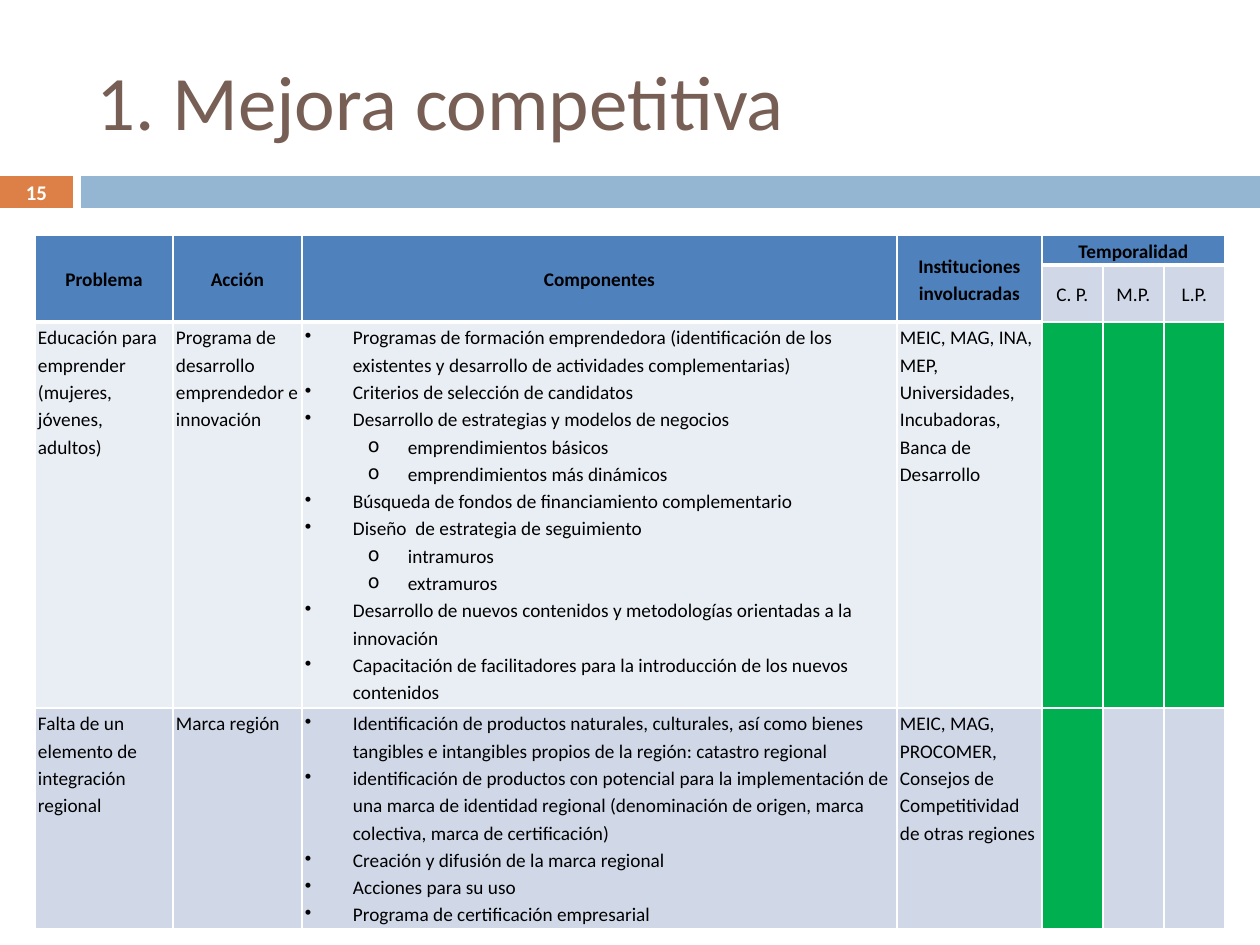
import pptx
import pptx.util
import pptx.dml.color
import pptx.enum.shapes
import pptx.enum.text
import pptx.oxml
import pptx.oxml.ns

EMU_PER_PX = 914400 / 126
ORANGE = pptx.dml.color.RGBColor(0xDD, 0x80, 0x47)
LIGHT_BLUE = pptx.dml.color.RGBColor(0x94, 0xB6, 0xD2)
BROWN = pptx.dml.color.RGBColor(0x77, 0x5F, 0x55)
HEADER_BLUE = pptx.dml.color.RGBColor(0x4F, 0x81, 0xBD)
PALE = pptx.dml.color.RGBColor(0xE9, 0xED, 0xF4)
PALE_BLUE = pptx.dml.color.RGBColor(0xD0, 0xD8, 0xE8)
GREEN = pptx.dml.color.RGBColor(0x00, 0xB0, 0x50)
WHITE = pptx.dml.color.RGBColor(0xFF, 0xFF, 0xFF)
BLACK = pptx.dml.color.RGBColor(0x00, 0x00, 0x00)
CENTER = pptx.enum.text.PP_ALIGN.CENTER
LEFT = pptx.enum.text.PP_ALIGN.LEFT
MIDDLE = pptx.enum.text.MSO_ANCHOR.MIDDLE
TOP = pptx.enum.text.MSO_ANCHOR.TOP

COLUMN_WIDTHS = [138, 129, 595, 145, 61, 61, 61]
ROW_HEIGHTS = [30, 57, 386, 221]
HEADERS = ["Problema", "Acción", "Componentes", "Instituciones involucradas", "Temporalidad"]
TERMS = ["C. P.", "M.P.", "L.P."]
BULLETS = [("•", 48, -48), ("o", 103, -40)]
BODY_ROWS = [
    (PALE, [GREEN, GREEN, GREEN], [
        "Educación para emprender (mujeres, jóvenes, adultos)",
        "Programa de desarrollo emprendedor e innovación",
        [
            (0, "Programas de formación emprendedora (identificación de los existentes y desarrollo "
                "de actividades complementarias)"),
            (0, "Criterios de selección de candidatos"),
            (0, "Desarrollo de estrategias y modelos de negocios"),
            (1, "emprendimientos básicos"),
            (1, "emprendimientos más dinámicos"),
            (0, "Búsqueda de fondos de financiamiento complementario"),
            (0, "Diseño  de estrategia de seguimiento"),
            (1, "intramuros"),
            (1, "extramuros"),
            (0, "Desarrollo de nuevos contenidos y metodologías orientadas a la innovación"),
            (0, "Capacitación de facilitadores para la introducción de los nuevos contenidos"),
        ],
        "MEIC, MAG, INA, MEP, Universidades, Incubadoras, Banca de Desarrollo",
    ]),
    (PALE_BLUE, [GREEN, PALE_BLUE, PALE_BLUE], [
        "Falta de un elemento de integración regional",
        "Marca región",
        [
            (0, "Identificación de productos naturales, culturales, así como bienes tangibles e "
                "intangibles propios de la región: catastro regional"),
            (0, "identificación de productos con potencial para la implementación de una marca de "
                "identidad regional (denominación de origen, marca colectiva, marca de certificación)"),
            (0, "Creación y difusión de la marca regional"),
            (0, "Acciones para su uso"),
            (0, "Programa de certificación empresarial"),
        ],
        "MEIC, MAG, PROCOMER, Consejos de Competitividad de otras regiones",
    ]),
]


def px(length):
    """Turn pixels into EMU."""
    return pptx.util.Emu(round(length * EMU_PER_PX))


def format_paragraph(paragraph, size, color, bold=False, alignment=LEFT):
    """Set the alignment and the font of every run."""
    paragraph.alignment = alignment
    for run in paragraph.runs:
        run.font.name = "Calibri"
        run.font.size = pptx.util.Pt(size)
        run.font.bold = bold
        run.font.color.rgb = color


def add_bar(slide, left, top, width, height, color):
    """Add a plain filled rectangle."""
    shape = slide.shapes.add_shape(
        pptx.enum.shapes.MSO_SHAPE.RECTANGLE, px(left), px(top), px(width), px(height))
    shape.shadow.inherit = False
    shape.fill.solid()
    shape.fill.fore_color.rgb = color
    shape.line.fill.background()
    return shape


def set_title(slide, text):
    """Place and format the title placeholder."""
    title = slide.shapes.title
    title.left, title.top, title.width, title.height = px(84), px(32), px(1124), px(136)
    title.text_frame.text = text
    title.text_frame.vertical_anchor = MIDDLE
    format_paragraph(title.text_frame.paragraphs[0], 44, BROWN)


def add_page_number(slide, number):
    """Add the orange block that holds the page number."""
    frame = add_bar(slide, 0, 176, 73, 32, ORANGE).text_frame
    frame.margin_top = frame.margin_bottom = 0
    frame.vertical_anchor = MIDDLE
    frame.text = number
    format_paragraph(frame.paragraphs[0], 11.9, WHITE, True, CENTER)


def set_bullet(paragraph, level):
    """Give a paragraph the bullet and hanging indent of its level."""
    character, margin, indent = BULLETS[level]
    paragraph.level = level
    properties = paragraph._p.get_or_add_pPr()
    properties.set("marL", str(px(margin)))
    properties.set("indent", str(px(indent)))
    bullet = pptx.oxml.parse_xml(f'<a:buChar {pptx.oxml.ns.nsdecls("a")} char="{character}"/>')
    properties.append(bullet)


def set_borders(cell, top=1, bottom=1):
    """Draw white borders round a cell."""
    widths = {"lnL": 1, "lnR": 1, "lnT": top, "lnB": bottom}
    for position, (side, width) in enumerate(widths.items()):
        line = pptx.oxml.parse_xml(
            f'<a:{side} {pptx.oxml.ns.nsdecls("a")} w="{pptx.util.Pt(width)}">'
            f'<a:solidFill><a:srgbClr val="{WHITE}"/></a:solidFill></a:{side}>')
        cell._tc.get_or_add_tcPr().insert(position, line)


def fill_cell(cell, content, color, bold=False, alignment=LEFT, anchor=TOP):
    """Write a string or a list of (level, text) items into a coloured cell."""
    cell.fill.solid()
    cell.fill.fore_color.rgb = color
    cell.vertical_anchor = anchor
    bulleted = isinstance(content, list)
    items = content if bulleted else [(0, content)]
    cell.text_frame.text = "\n".join(text for level, text in items)
    for paragraph, (level, text) in zip(cell.text_frame.paragraphs, items):
        paragraph.line_spacing = 1.15
        format_paragraph(paragraph, 11, BLACK, bold, alignment)
        if bulleted:
            set_bullet(paragraph, level)


def add_plan_table(slide):
    """Add the table of problems, actions and terms."""
    table = slide.shapes.add_table(
        len(ROW_HEIGHTS), len(COLUMN_WIDTHS), px(35), px(235),
        px(sum(COLUMN_WIDTHS)), px(sum(ROW_HEIGHTS))).table
    table.first_row = table.horz_banding = False
    for column, width in zip(table.columns, COLUMN_WIDTHS):
        column.width = px(width)
    for row, height in zip(table.rows, ROW_HEIGHTS):
        row.height = px(height)
    for cell in table.iter_cells():
        cell.margin_left = cell.margin_right = px(3)
        cell.margin_top = cell.margin_bottom = px(1)

    term_column = len(HEADERS) - 1
    for column in range(term_column):
        table.cell(0, column).merge(table.cell(1, column))
    table.cell(0, term_column).merge(table.cell(0, len(COLUMN_WIDTHS) - 1))
    for column, text in enumerate(HEADERS):
        fill_cell(table.cell(0, column), text, HEADER_BLUE, True, CENTER, MIDDLE)
    for column, text in enumerate(TERMS, term_column):
        fill_cell(table.cell(1, column), text, PALE_BLUE, False, CENTER, MIDDLE)
    for row, (color, term_colors, contents) in enumerate(BODY_ROWS, 2):
        for column, content in enumerate(contents):
            fill_cell(table.cell(row, column), content, color)
        for column, term_color in enumerate(term_colors, term_column):
            fill_cell(table.cell(row, column), "", term_color)

    for row in range(len(ROW_HEIGHTS)):
        for column in range(len(COLUMN_WIDTHS)):
            is_term = column >= term_column
            thick_top = row == 1 if is_term else row == 2
            thick_bottom = row == 0 if is_term else row < 2
            set_borders(table.cell(row, column), 3 if thick_top else 1, 3 if thick_bottom else 1)


def main():
    """Build the slide and save it."""
    presentation = pptx.Presentation()
    presentation.slide_width, presentation.slide_height = px(1260), px(945)
    slide = presentation.slides.add_slide(presentation.slide_layouts[5])
    set_title(slide, "1. Mejora competitiva")
    add_bar(slide, 81, 176, 1179, 32, LIGHT_BLUE)
    add_plan_table(slide)
    add_page_number(slide, "15")
    presentation.save("out.pptx")


if __name__ == "__main__":
    main()
